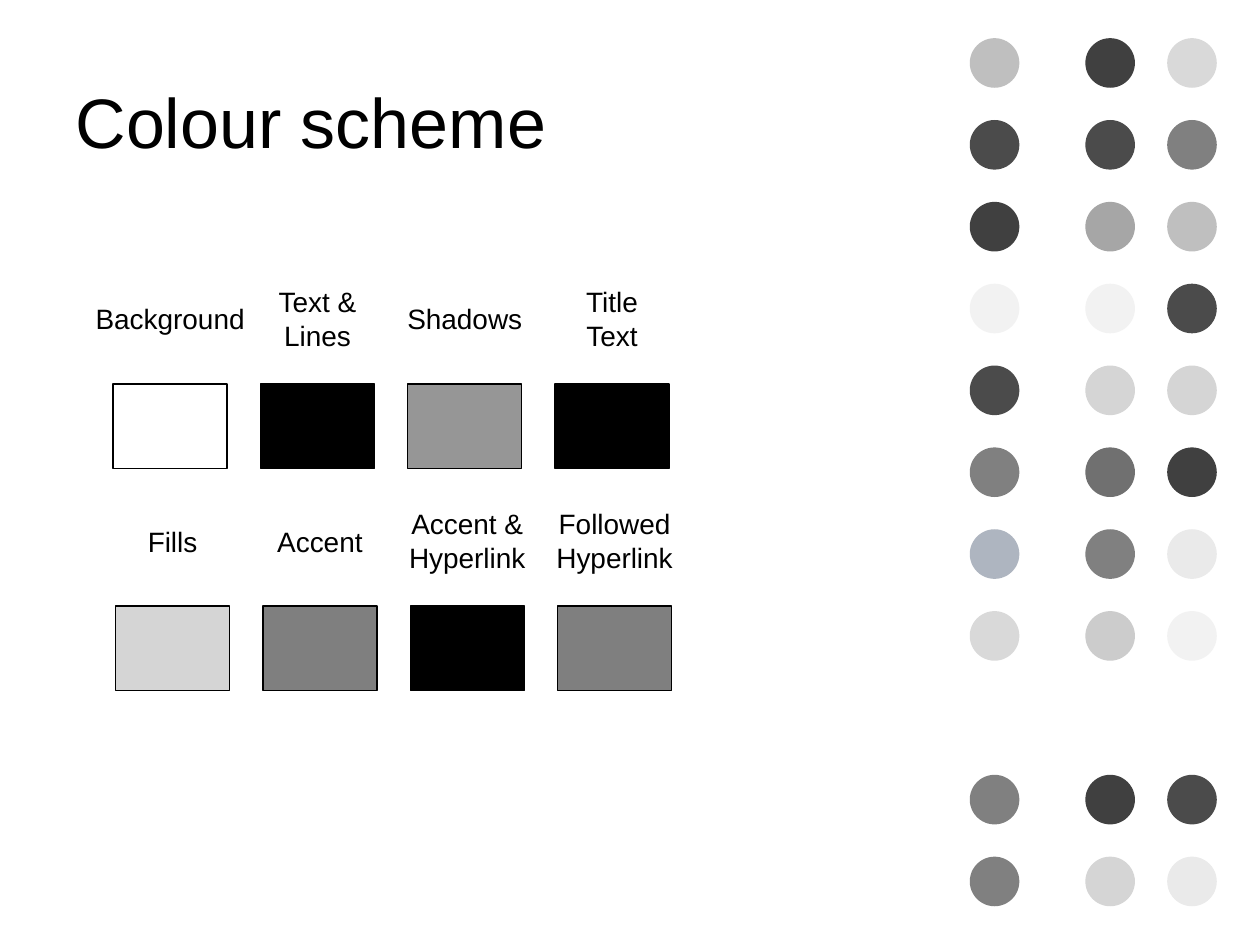
from pptx import Presentation
from pptx import util as u
from pptx.dml.color import RGBColor
from pptx.enum import shapes, text

FONT = "Arial"
BLACK = RGBColor(0x00, 0x00, 0x00)
WHITE = RGBColor(0xFF, 0xFF, 0xFF)
SHADOW = RGBColor(0x96, 0x96, 0x96)
FILLS = RGBColor(0xD5, 0xD5, 0xD5)
ACCENT = RGBColor(0x7F, 0x7F, 0x7F)
COAL = RGBColor(0x40, 0x40, 0x40)
IRON = RGBColor(0x4B, 0x4B, 0x4B)
SLATE = RGBColor(0x70, 0x70, 0x70)
GREY = RGBColor(0x80, 0x80, 0x80)
ASH = RGBColor(0xA6, 0xA6, 0xA6)
BLUE_GREY = RGBColor(0xAE, 0xB5, 0xC0)
SILVER = RGBColor(0xBF, 0xBF, 0xBF)
CLOUD = RGBColor(0xCC, 0xCC, 0xCC)
PEARL = RGBColor(0xD9, 0xD9, 0xD9)
MIST = RGBColor(0xEA, 0xEA, 0xEA)
SNOW = RGBColor(0xF2, 0xF2, 0xF2)

DOT_ROWS = [
    (SILVER, COAL, PEARL),
    (IRON, IRON, GREY),
    (COAL, ASH, SILVER),
    (SNOW, SNOW, IRON),
    (IRON, FILLS, FILLS),
    (GREY, SLATE, COAL),
    (BLUE_GREY, GREY, MIST),
    (PEARL, CLOUD, SNOW),
    (),
    (GREY, COAL, IRON),
    (GREY, FILLS, MIST),
]
DOT_OFFSETS = (0, 2.33, 3.98)

BASE_SWATCHES = [
    ("Background", 3.53, WHITE),
    ("Text &\nLines", 2.15, BLACK),
    ("Shadows", 2.84, SHADOW),
    ("Title\vText", 1.62, BLACK),
]
ACCENT_SWATCHES = [
    ("Fills", 1.52, FILLS),
    ("Accent", 2.26, ACCENT),
    ("Accent &\nHyperlink", 2.92, BLACK),
    ("Followed\nHyperlink", 2.92, ACCENT),
]


def style_run(run, size):
    run.font.name = FONT
    run.font.size = u.Pt(size)
    run.font.color.rgb = BLACK


def add_filled(slide, preset, left, top, width, height, color):
    filled = slide.shapes.add_shape(
        preset, u.Cm(left), u.Cm(top), u.Cm(width), u.Cm(height))
    filled.shadow.inherit = False
    filled.fill.solid()
    filled.fill.fore_color.rgb = color
    return filled


def place_heading(slide, left, top, width, height):
    heading = slide.shapes.title
    heading.left, heading.top = u.Cm(left), u.Cm(top)
    heading.width, heading.height = u.Cm(width), u.Cm(height)
    frame = heading.text_frame
    frame.auto_size = text.MSO_AUTO_SIZE.NONE
    frame.vertical_anchor = text.MSO_ANCHOR.MIDDLE
    line = frame.paragraphs[0]
    line.alignment = text.PP_ALIGN.LEFT
    run = line.add_run()
    run.text = "Colour scheme"
    style_run(run, 40)


def place_dots(slide, left, top, pitch=1.65, diameter=1):
    for row, colors in enumerate(DOT_ROWS):
        for offset, color in zip(DOT_OFFSETS, colors):
            dot = add_filled(slide, shapes.MSO_SHAPE.OVAL, left + offset,
                             top + row * pitch, diameter, diameter, color)
            dot.line.fill.background()


def place_label(slide, center, middle, width, wording):
    paragraphs = wording.split("\n")
    height = 0.94 if wording.isalpha() else 1.63
    label = slide.shapes.add_textbox(
        u.Cm(center - width / 2), u.Cm(middle - height / 2),
        u.Cm(width), u.Cm(height))
    frame = label.text_frame
    frame.word_wrap = False
    frame.auto_size = text.MSO_AUTO_SIZE.SHAPE_TO_FIT_TEXT
    for index, content in enumerate(paragraphs):
        paragraph = frame.add_paragraph() if index else frame.paragraphs[0]
        paragraph.alignment = text.PP_ALIGN.CENTER
        for position, words in enumerate(content.split("\v")):
            if position:
                paragraph.add_line_break()
            run = paragraph.add_run()
            run.text = words
            style_run(run, 16)


def place_swatches(slide, left, top, swatches):
    width, height, pitch = 2.3, 1.7, 2.97
    for column, (wording, label_width, color) in enumerate(swatches):
        swatch_left = left + column * pitch
        swatch = add_filled(slide, shapes.MSO_SHAPE.RECTANGLE, swatch_left,
                            top + 2.11, width, height, color)
        swatch.line.color.rgb = BLACK
        swatch.line.width = u.Pt(0.75)
        place_label(slide, swatch_left + width / 2, top + 0.8,
                    label_width, wording)


def main():
    deck = Presentation()
    deck.slide_width, deck.slide_height = u.Cm(25.4), u.Cm(19.05)
    slide = deck.slides.add_slide(deck.slide_layouts[5])
    place_dots(slide, 19.55, 0.77)
    place_heading(slide, 1.27, 0.72, 19.3, 3.4)
    place_swatches(slide, 2.28, 5.63, BASE_SWATCHES)
    place_swatches(slide, 2.33, 10.11, ACCENT_SWATCHES)
    deck.save("out.pptx")


if __name__ == "__main__":
    main()
